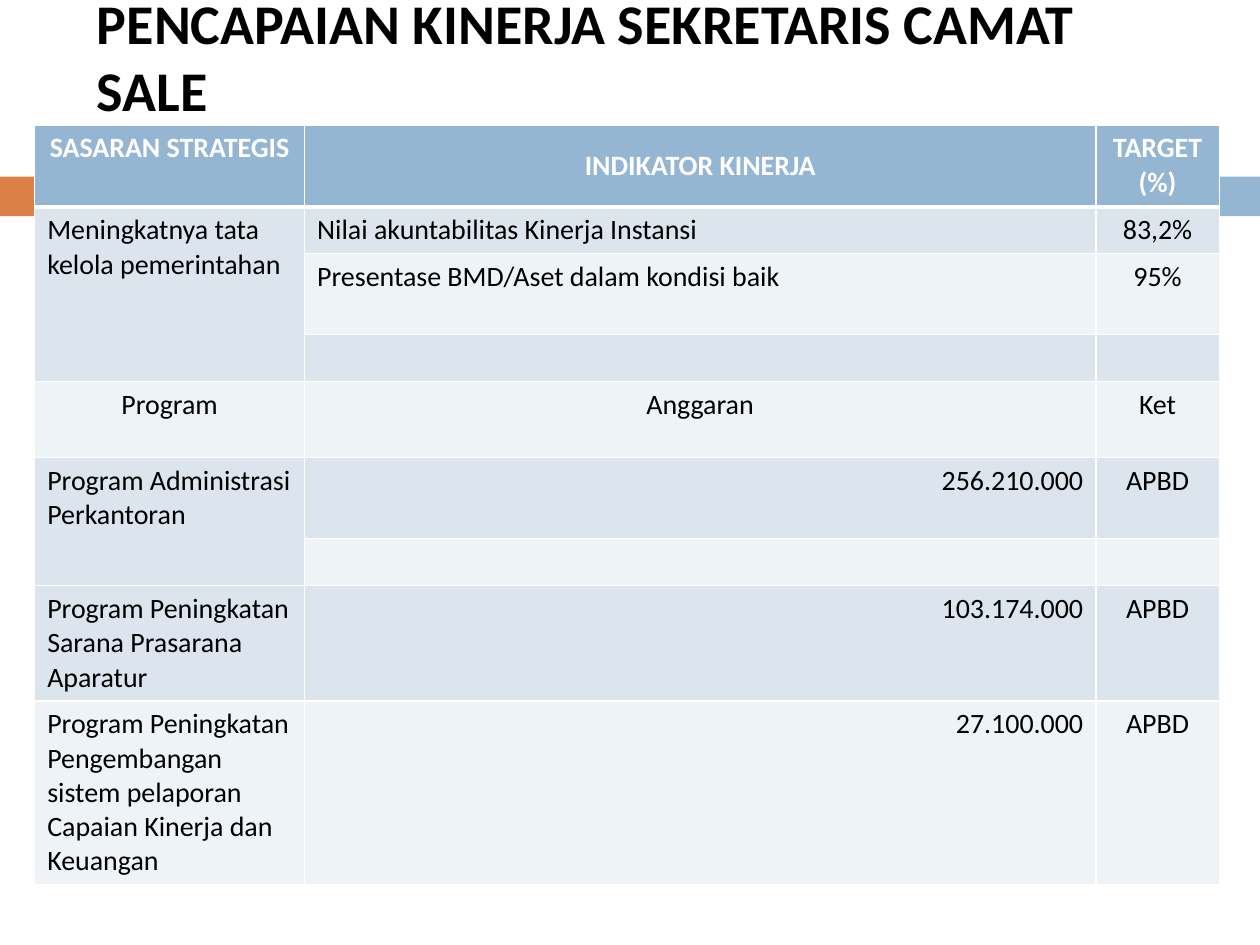
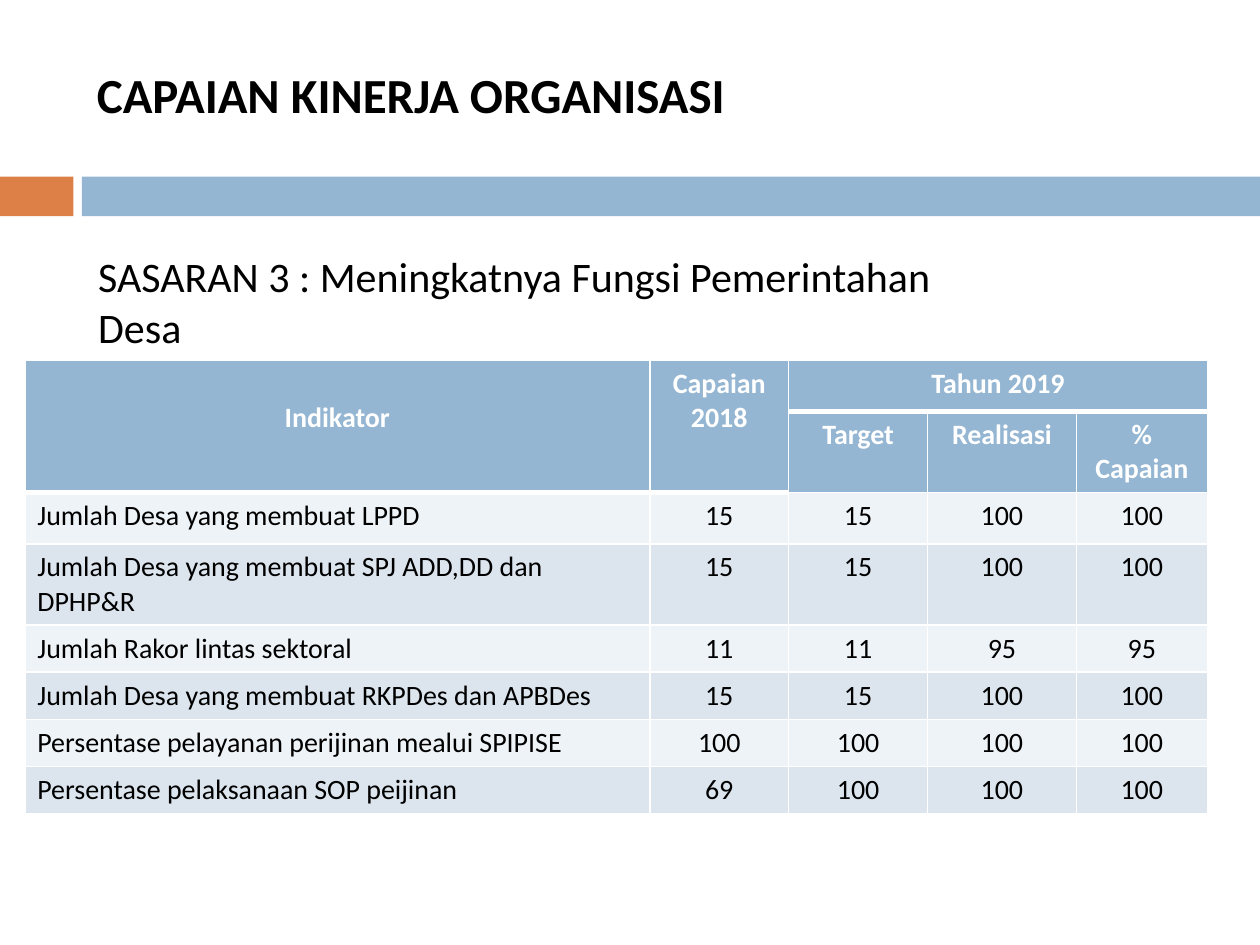
from lxml import etree
from pptx import Presentation
from pptx import util as u
from pptx.dml.color import RGBColor
from pptx.enum import shapes, text
from pptx.oxml.ns import qn

FONT = "Calibri"
BLACK, WHITE, BLUE, ORANGE = "000000", "FFFFFF", "94B6D2", "DD8047"
ROW_FILLS = ("EEF3F7", "DCE5EE")  # even and odd rows
ALIGN = {"l": text.PP_ALIGN.LEFT, "c": text.PP_ALIGN.CENTER, "r": text.PP_ALIGN.RIGHT}

# Bands shared by both slides: left, width, colour
BANDS = [(0, 1.48, ORANGE), (1.65, 23.75, BLUE)]

# Tables: rows are (height, alignment per column, texts); lengths in cm
# Merges are (first row, first column, last row, last column)
SECRETARY = {
    "left": 0.7, "top": 2.52, "widths": [5.44, 15.95, 2.49], "header_rows": 1,
    "merges": [(1, 0, 3, 0), (5, 0, 6, 0)],
    "rows": [
        (1.65, "ccc", ["SASARAN STRATEGIS", "INDIKATOR KINERJA", "TARGET (%)"]),
        (0.93, "llc", ["Meningkatnya tata kelola pemerintahan",
                       "Nilai akuntabilitas Kinerja Instansi", "83,2%"]),
        (1.63, "llc", ["", "Presentase BMD/Aset dalam kondisi baik", "95%"]),
        (0.95, "llc", ["", "", ""]),
        (1.53, "ccc", ["Program", "Anggaran", "Ket"]),
        (1.63, "lrc", ["Program Administrasi Perkantoran", "256.210.000", "APBD"]),
        (0.95, "lrc", ["", "", ""]),
        (2.32, "lrc", ["Program Peningkatan Sarana Prasarana Aparatur",
                       "103.174.000", "APBD"]),
        (3.7, "lrc", ["Program Peningkatan Pengembangan sistem pelaporan "
                      "Capaian Kinerja dan Keuangan", "27.100.000", "APBD"]),
    ],
}
ORGANISATION = {
    "left": 0.5, "top": 7.27, "widths": [12.6, 2.8, 2.8, 3, 2.64], "header_rows": 2,
    "merges": [(0, 0, 1, 0), (0, 1, 1, 1), (0, 2, 0, 4)],
    "rows": [
        (1.02, "ccccc", ["Indikator", "Capaian 2018", "Tahun 2019", "", ""]),
        (1.63, "ccccc", ["", "", "Target", "Realisasi", "% Capaian"]),
        (1.04, "lcccc", ["Jumlah Desa yang membuat LPPD", "15", "15", "100", "100"]),
        (1.63, "lcccc", ["Jumlah Desa yang membuat SPJ ADD,DD dan DPHP&R",
                         "15", "15", "100", "100"]),
        (0.95, "lcccc", ["Jumlah Rakor lintas sektoral", "11", "11", "95", "95"]),
        (0.95, "lcccc", ["Jumlah Desa yang membuat RKPDes dan APBDes",
                         "15", "15", "100", "100"]),
        (0.95, "lcccc", ["Persentase pelayanan perijinan mealui SPIPISE",
                         "100", "100", "100", "100"]),
        (0.95, "lcccc", ["Persentase pelaksanaan SOP peijinan",
                         "69", "100", "100", "100"]),
    ],
}


def colour(hex_code):
    return RGBColor.from_string(hex_code)


def write(frame, words, size, hex_code=BLACK, bold=False, align="l"):
    para = frame.paragraphs[0]
    para.text = words
    para.alignment = ALIGN[align]
    para.font.name, para.font.size, para.font.bold = FONT, u.Pt(size), bold
    para.font.color.rgb = colour(hex_code)


def add_page(deck, title, top, height, size):
    page = deck.slides.add_slide(deck.slide_layouts[5])
    for left, width, fill in BANDS:
        band = page.shapes.add_shape(shapes.MSO_SHAPE.RECTANGLE, u.Cm(left),
                                     u.Cm(3.56), u.Cm(width), u.Cm(0.8))
        band.shadow.inherit = False
        band.fill.solid()
        band.fill.fore_color.rgb = colour(fill)
        band.line.fill.background()
    box = page.shapes.title
    box.left, box.top, box.width, box.height = map(u.Cm, (1.7, top, 22.65, height))
    box.text_frame.vertical_anchor = text.MSO_ANCHOR.MIDDLE
    box.text_frame.auto_size = text.MSO_AUTO_SIZE.NONE
    write(box.text_frame, title, size, bold=True)
    return page


def add_border(cell, side, points):
    line = etree.SubElement(cell._tc.get_or_add_tcPr(), qn("a:" + side),
                            w=str(u.Pt(points)))
    fill = etree.SubElement(line, qn("a:solidFill"))
    etree.SubElement(fill, qn("a:srgbClr"), val=WHITE)


def add_grid(page, plan):
    rows, widths = plan["rows"], plan["widths"]
    grid = page.shapes.add_table(
        len(rows), len(widths), u.Cm(plan["left"]), u.Cm(plan["top"]),
        u.Cm(sum(widths)), u.Cm(sum(row[0] for row in rows))).table
    for column, width in zip(grid.columns, widths):
        column.width = u.Cm(width)
    for top, left, bottom, right in plan["merges"]:
        grid.cell(top, left).merge(grid.cell(bottom, right))

    for r, (height, aligns, words) in enumerate(rows):
        grid.rows[r].height = u.Cm(height)
        header = r < plan["header_rows"]
        for c, (align, label) in enumerate(zip(aligns, words)):
            cell = grid.cell(r, c)
            # A thick rule closes the top header cells, merged ones included
            thick = r == 0 or (header and cell.is_spanned)
            for side in ("lnL", "lnR") + (("lnT",) if r == 0 else ()):
                add_border(cell, side, 1)
            add_border(cell, "lnB", 3 if thick else 1)
            cell.fill.solid()
            cell.fill.fore_color.rgb = colour(BLUE if header else ROW_FILLS[r % 2])
            if label:
                write(cell.text_frame, label, 16, WHITE if header else BLACK,
                      header, align)
            else:
                cell.margin_top = cell.margin_bottom = 0
    return grid


def main():
    deck = Presentation()
    deck.slide_width, deck.slide_height = u.Cm(25.4), u.Cm(19.05)

    # Secretary's targets and budget
    page = add_page(deck, "PENCAPAIAN KINERJA SEKRETARIS CAMAT SALE", -0.08, 2.39, 32)
    grid = add_grid(page, SECRETARY)
    grid.cell(0, 1).vertical_anchor = text.MSO_ANCHOR.MIDDLE

    # Organisation's results
    page = add_page(deck, "CAPAIAN KINERJA ORGANISASI", 0.53, 2.74, 28)
    grid = add_grid(page, ORGANISATION)
    grid.cell(0, 0).margin_top = u.Cm(0.81)
    goal = page.shapes.add_textbox(u.Cm(1.73), u.Cm(4.93), u.Cm(19.1), u.Cm(1.27))
    goal.text_frame.word_wrap = True
    write(goal.text_frame, "SASARAN 3 : Meningkatnya Fungsi Pemerintahan Desa", 24)

    deck.save("out.pptx")


if __name__ == "__main__":
    main()
